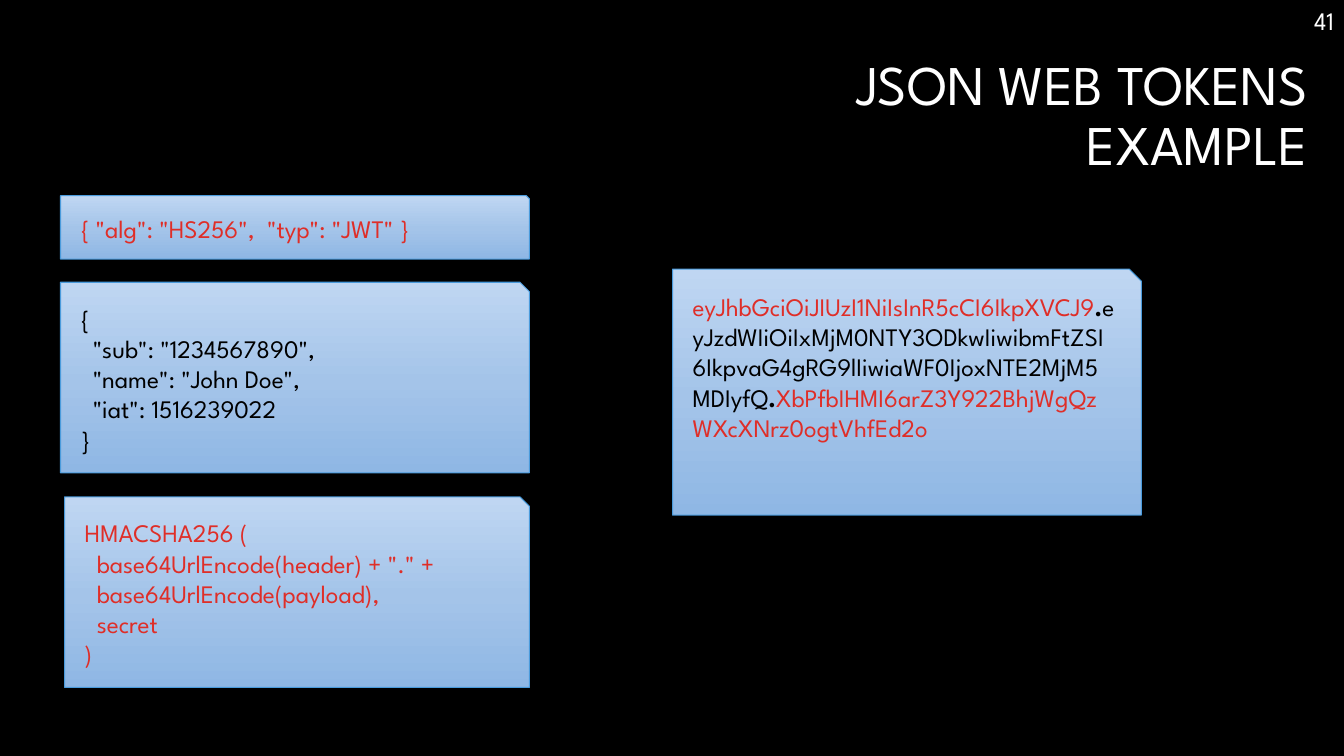
from copy import deepcopy
from pptx import Presentation
from pptx.dml.color import RGBColor
from pptx.enum.shapes import MSO_SHAPE
from pptx.enum.text import MSO_ANCHOR, PP_ALIGN
from pptx.oxml.ns import qn
from pptx.util import Inches, Pt

FONT = "League Spartan"
WHITE, BLACK, RED = "FFFFFF", "000000", "DF2E28"
LEFT, TOKEN_LEFT, CARD_WIDTH = 0.6, 6.67, 4.65
CODE_INDENT = 0.12


def color(value):
    return RGBColor.from_string(value)


def style(font, size, value):
    font.name, font.size, font.color.rgb = FONT, Pt(size), color(value)


presentation = Presentation()
presentation.slide_width, presentation.slide_height = Inches(13.33), Inches(7.5)
slide = presentation.slides.add_slide(presentation.slide_layouts[6])
slide.background.fill.solid()
slide.background.fill.fore_color.rgb = color(BLACK)

headings = [
    ("JSON WEB TOKENS\vEXAMPLE", (0.26, 0.46, 12.81, 1.41), 40, 0.9),
    ("41", (10.45, 0, 2.88, 0.4), 18, 1),
]
for text, box, size, spacing in headings:
    frame = slide.shapes.add_textbox(*map(Inches, box)).text_frame
    frame.word_wrap = True
    frame.vertical_anchor = MSO_ANCHOR.MIDDLE
    paragraph = frame.paragraphs[0]
    paragraph.text = text
    paragraph.alignment = PP_ALIGN.RIGHT
    paragraph.line_spacing = spacing
    style(paragraph.font, size, WHITE)

header = [(0, [('{ "alg": "HS256",  "typ": "JWT" }', RED)])]
payload = [
    (0, [("{", BLACK)]),
    (1, [('"sub": "1234567890",', BLACK)]),
    (1, [('"name": "John Doe",', BLACK)]),
    (1, [('"iat": 1516239022', BLACK)]),
    (0, [("}", BLACK)]),
]
signature = [
    (0, [("HMACSHA256 (", RED)]),
    (1, [('base64UrlEncode(header) + "." +', RED)]),
    (1, [("base64UrlEncode(payload),", RED)]),
    (1, [("secret", RED)]),
    (0, [(")", RED)]),
]
token = [(0, [
    ("eyJhbGciOiJIUzI1NiIsInR5cCI6IkpXVCJ9", RED),
    (".", BLACK),
    ("eyJzdWIiOiIxMjM0NTY3ODkwIiwibmFtZSI6IkpvaG4gRG9lIiwiaWF0IjoxNTE2MjM5MDIyfQ", BLACK),
    (".", BLACK),
    ("XbPfbIHMI6arZ3Y922BhjWgQzWXcXNrz0ogtVhfEd2o", RED),
])]
cards = [
    (header, (LEFT, 1.94, CARD_WIDTH, 0.63)),
    (payload, (LEFT, 2.8, CARD_WIDTH, 1.89)),
    (signature, (LEFT + 0.04, 4.93, CARD_WIDTH - 0.04, 1.89)),
    (token, (TOKEN_LEFT, 2.67, CARD_WIDTH, 2.44)),
]
gradient = [(0, "BFD6F2"), (0.52, "A4C4E9"), (1, "8FB7E4")]

for lines, box in cards:
    shape = slide.shapes.add_shape(MSO_SHAPE.SNIP_1_RECTANGLE, *map(Inches, box))
    shape.adjustments[0] = 0.049
    shape.shadow.inherit = False
    shape.fill.gradient()
    shape.fill.gradient_angle = 270
    stop_list = next(shape._element.iter(qn("a:gsLst")))
    stop_list.append(deepcopy(stop_list[-1]))
    for stop, (position, value) in zip(shape.fill.gradient_stops, gradient):
        stop.position = position
        stop.color.rgb = color(value)
    shape.line.color.rgb = color("4A9BDC")
    shape.line.width = Pt(0.75)

    frame = shape.text_frame
    frame.word_wrap = True
    frame.vertical_anchor = MSO_ANCHOR.TOP
    frame.margin_left = frame.margin_right = frame.margin_bottom = Inches(0.2)
    frame.margin_top = Inches(0.16)
    for index, (level, runs) in enumerate(lines):
        paragraph = frame.add_paragraph() if index else frame.paragraphs[0]
        paragraph.alignment = PP_ALIGN.LEFT
        paragraph._p.get_or_add_pPr().set("marL", str(Inches(CODE_INDENT * level)))
        for text, value in runs:
            run = paragraph.add_run()
            run.text = text
            style(run.font, 18, value)
            run.font.bold = text == "."

presentation.save("out.pptx")
